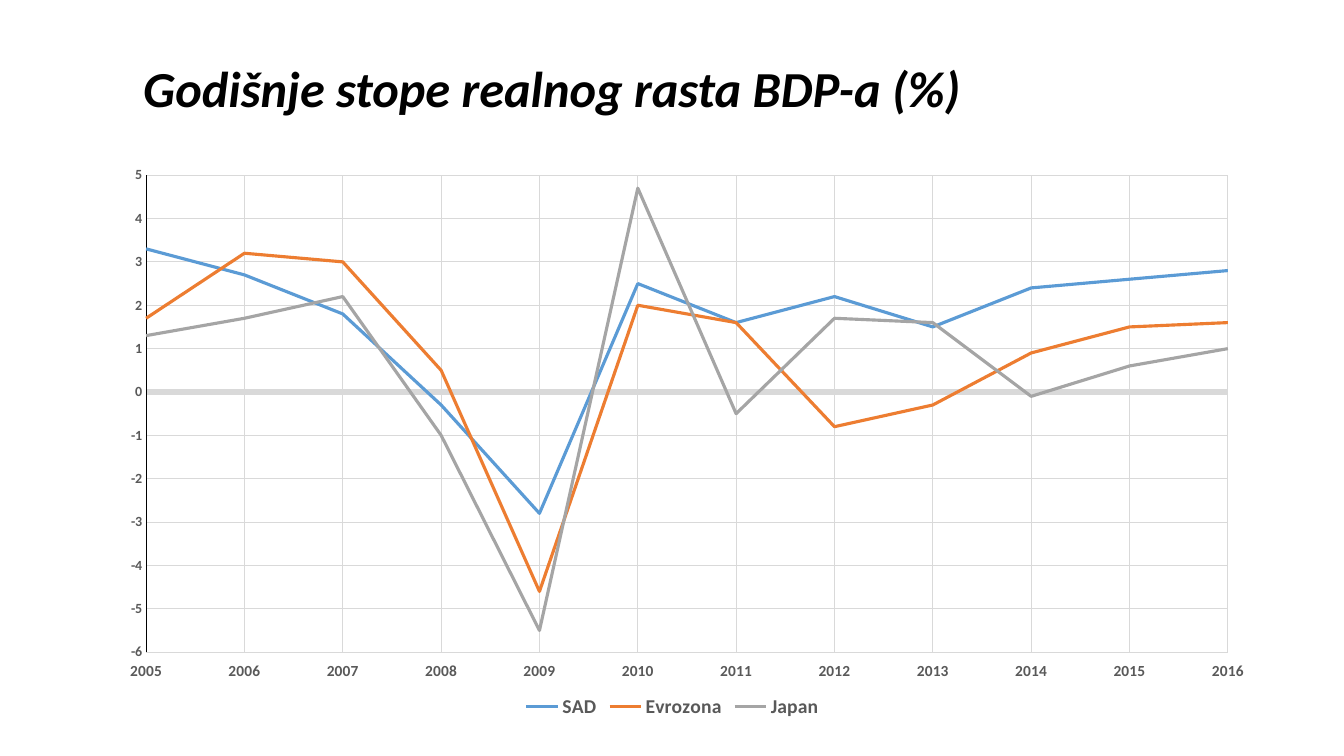
"""Build a slide with a line chart of annual real GDP growth rates."""
from lxml import etree
from pptx import Presentation
from pptx import util as u
from pptx.chart.data import CategoryChartData
from pptx.dml.color import RGBColor
from pptx.enum import chart as charts, text
from pptx.oxml.ns import qn

BLACK = RGBColor(0x00, 0x00, 0x00)
DARK_GREY = RGBColor(0x59, 0x59, 0x59)
LIGHT_GREY = RGBColor(0xD9, 0xD9, 0xD9)
BLUE = RGBColor(0x5B, 0x9B, 0xD5)
ORANGE = RGBColor(0xED, 0x7D, 0x31)
GREY = RGBColor(0xA5, 0xA5, 0xA5)

YEARS = [str(year) for year in range(2005, 2017)]
GROWTH = {
    "SAD": (BLUE, [3.3, 2.7, 1.8, -0.3, -2.8, 2.5, 1.6, 2.2, 1.5, 2.4, 2.6, 2.8]),
    "Evrozona": (ORANGE, [1.7, 3.2, 3, 0.5, -4.6, 2, 1.6, -0.8, -0.3, 0.9, 1.5, 1.6]),
    "Japan": (GREY, [1.3, 1.7, 2.2, -1, -5.5, 4.7, -0.5, 1.7, 1.6, -0.1, 0.6, 1]),
}


class GrowthSlide:
    font_name = "Calibri"

    def __init__(self, presentation):
        self.slide = presentation.slides.add_slide(presentation.slide_layouts[5])

    def style_font(self, font, size, color):
        font.name = self.font_name
        font.size = u.Pt(size)
        font.bold = True
        font.color.rgb = color

    def style_line(self, line, width, color):
        line.width = u.Pt(width)
        line.color.rgb = color

    def add_title(self, wording, left, top, width, height):
        title = self.slide.shapes.title
        title.left, title.top = u.Inches(left), u.Inches(top)
        title.width, title.height = u.Inches(width), u.Inches(height)
        frame = title.text_frame
        frame.text = wording
        frame.word_wrap = True
        frame.auto_size = text.MSO_AUTO_SIZE.NONE
        frame.vertical_anchor = text.MSO_ANCHOR.MIDDLE
        paragraph = frame.paragraphs[0]
        paragraph.alignment = text.PP_ALIGN.LEFT
        paragraph.line_spacing = 0.9
        self.style_font(paragraph.font, 36, BLACK)
        paragraph.font.italic = True

    def add_line_chart(self, categories, series_table, left, top, width, height):
        data = CategoryChartData(number_format="0.0")
        data.categories = categories
        for name, (_, values) in series_table.items():
            data.add_series(name, values)
        chart = self.slide.shapes.add_chart(
            charts.XL_CHART_TYPE.LINE, u.Inches(left), u.Inches(top),
            u.Inches(width), u.Inches(height), data).chart
        chart.has_title = False
        chart.font.name = self.font_name
        chart.font.size = u.Pt(10)
        chart.font.color.rgb = BLACK
        chart.plots[0].vary_by_categories = False
        for series in chart.plots[0].series:
            series.smooth = False
            series.marker.style = charts.XL_MARKER_STYLE.NONE
            self.style_line(series.format.line, 2.25, series_table[series.name][0])
        self.style_axis(chart.category_axis, 11, 4.5, LIGHT_GREY)
        chart.category_axis.tick_label_position = charts.XL_TICK_LABEL_POSITION.LOW
        value_axis = chart.value_axis
        self.style_axis(value_axis, 10, 0.75, BLACK)
        value_axis.minimum_scale, value_axis.maximum_scale = -6, 5
        value_axis.major_unit = 1
        value_axis.tick_labels.number_format = "0"
        value_axis.tick_labels.number_format_is_linked = False
        chart.has_legend = True
        chart.legend.position = charts.XL_LEGEND_POSITION.BOTTOM
        chart.legend.include_in_layout = False
        self.style_font(chart.legend.font, 14, DARK_GREY)
        self.place_plot(chart, x=0.046, y=0.052, w=0.933, h=0.826)

    def style_axis(self, axis, label_size, line_width, line_color):
        axis.major_tick_mark = axis.minor_tick_mark = charts.XL_TICK_MARK.NONE
        axis.has_major_gridlines = True
        self.style_line(axis.major_gridlines.format.line, 0.75, LIGHT_GREY)
        self.style_line(axis.format.line, line_width, line_color)
        self.style_font(axis.tick_labels.font, label_size, DARK_GREY)

    def place_plot(self, chart, **fractions):
        plot_area = chart.element.find(".//" + qn("c:plotArea"))
        for old_layout in plot_area.findall(qn("c:layout")):
            plot_area.remove(old_layout)
        layout = etree.Element(qn("c:layout"))
        plot_area.insert(0, layout)
        manual = etree.SubElement(layout, qn("c:manualLayout"))
        settings = {"layoutTarget": "inner", "xMode": "edge", "yMode": "edge", **fractions}
        for tag, value in settings.items():
            etree.SubElement(manual, qn("c:" + tag)).set("val", str(value))
        value_axis = plot_area.find(qn("c:valAx"))
        for old_crossing in value_axis.findall(qn("c:crossBetween")):
            value_axis.remove(old_crossing)
        crossing = etree.Element(qn("c:crossBetween"), val="midCat")
        value_axis.find(qn("c:crosses")).addnext(crossing)


def main():
    presentation = Presentation()
    presentation.slide_width = u.Inches(13.33)
    presentation.slide_height = u.Inches(7.5)
    growth_slide = GrowthSlide(presentation)
    growth_slide.add_title("Godišnje stope realnog rasta BDP-a (%)", 1.32, 0.38, 11.26, 1.05)
    growth_slide.add_line_chart(YEARS, GROWTH, 0.92, 1.44, 11.5, 5.73)
    presentation.save("out.pptx")


if __name__ == "__main__":
    main()
